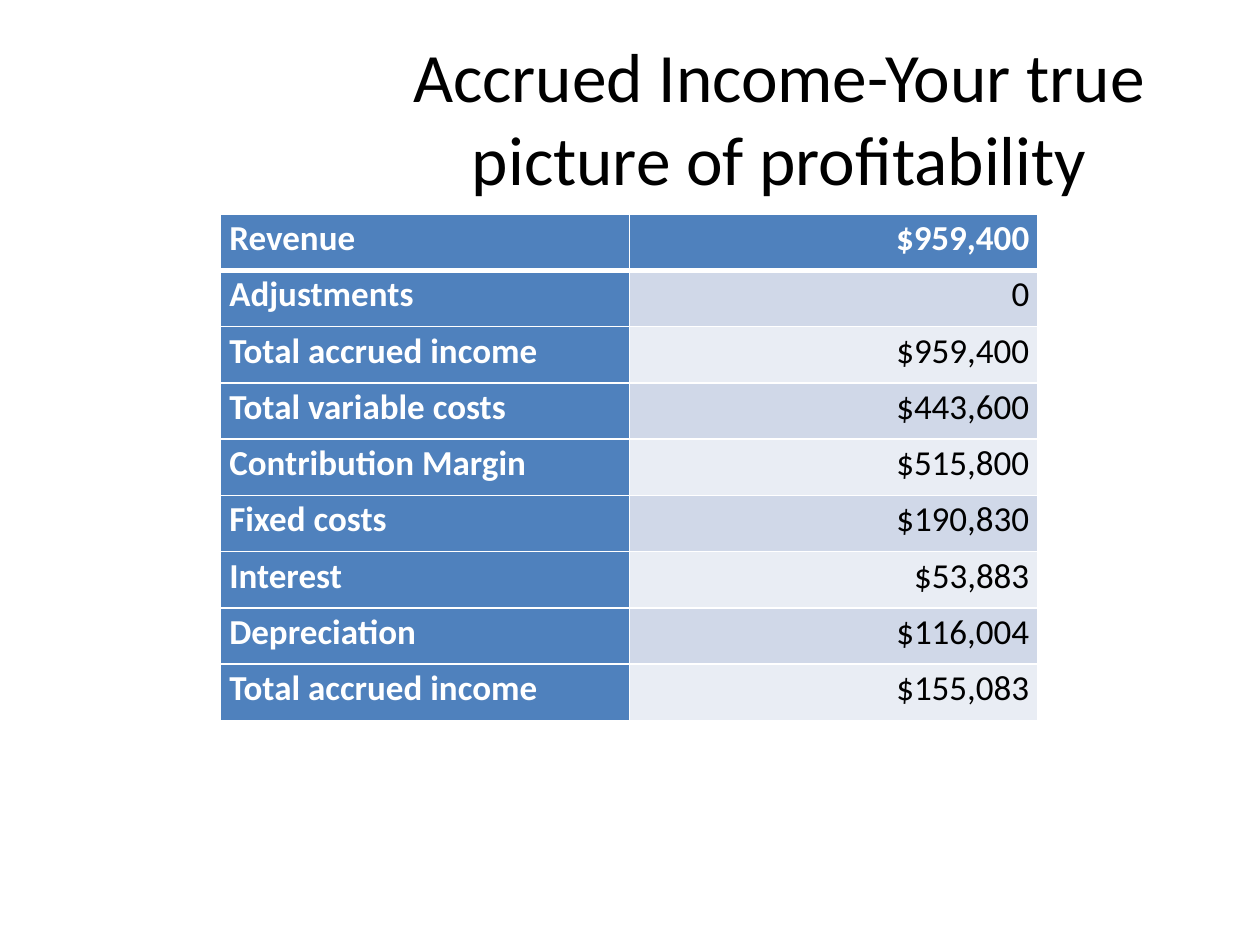
from pptx import Presentation
from pptx.dml.color import RGBColor
from pptx.enum import text
from pptx.oxml import parse_xml
from pptx.oxml.ns import nsdecls
from pptx.util import Inches, Pt

FONT = "Calibri"
WHITE = RGBColor(0xFF, 0xFF, 0xFF)
BLACK = RGBColor(0, 0, 0)
BLUE = RGBColor(0x4F, 0x81, 0xBD)
BANDS = RGBColor(0xE9, 0xED, 0xF4), RGBColor(0xD0, 0xD8, 0xE8)

ROWS = [
    ("Revenue", "$959,400"),
    ("Adjustments", "0"),
    ("Total accrued income", "$959,400"),
    ("Total variable costs", "$443,600"),
    ("Contribution Margin", "$515,800"),
    ("Fixed costs", "$190,830"),
    ("Interest", "$53,883"),
    ("Depreciation", "$116,004"),
    ("Total accrued income", "$155,083"),
]


def style(para, size, color, align, bold=False):
    para.alignment = align
    font = para.font
    font.name = FONT
    font.size = Pt(size)
    font.bold = bold
    font.color.rgb = color


def add_title(slide, words):
    box = slide.shapes.add_textbox(
        Inches(2.87), Inches(0.3), Inches(6.63), Inches(1.25))
    frame = box.text_frame
    frame.word_wrap = True
    frame.vertical_anchor = text.MSO_ANCHOR.MIDDLE
    frame.text = words
    style(frame.paragraphs[0], 39.6, BLACK, text.PP_ALIGN.CENTER)


def add_edge(cell, side, width):
    cell._tc.get_or_add_tcPr().append(parse_xml(
        f'<a:ln{side} {nsdecls("a")} w="{Pt(width)}"><a:solidFill>'
        f'<a:srgbClr val="{WHITE}"/></a:solidFill></a:ln{side}>'))


def fill_cell(cell, words, row, col):
    head = row == 0 or col == 0
    cell.margin_left = cell.margin_right = Inches(0.07)
    cell.margin_top = cell.margin_bottom = 0
    add_edge(cell, "L", 1)
    add_edge(cell, "R", 1)
    add_edge(cell, "T", 3 if row == 1 else 1)
    add_edge(cell, "B", 3 if row == 0 else 1)
    cell.fill.solid()
    cell.fill.fore_color.rgb = BLUE if head else BANDS[row % 2]
    cell.text = words
    para = cell.text_frame.paragraphs[0]
    para.line_spacing = 1.07
    align = text.PP_ALIGN.RIGHT if col else text.PP_ALIGN.LEFT
    style(para, 20, WHITE if head else BLACK, align, head)


def add_grid(slide, rows):
    high = Inches(4.02)
    table = slide.shapes.add_table(
        len(rows), 2, Inches(1.75), Inches(1.7), Inches(6.49), high).table
    table.first_col = True
    for r, pair in enumerate(rows):
        table.rows[r].height = high // len(rows)
        for c, words in enumerate(pair):
            fill_cell(table.cell(r, c), words, r, c)


def main():
    deck = Presentation()
    deck.slide_width = Inches(10)
    deck.slide_height = Inches(7.5)
    slide = deck.slides.add_slide(deck.slide_layouts[6])
    add_title(slide, "Accrued Income-Your true picture of profitability")
    add_grid(slide, ROWS)
    deck.save("out.pptx")


if __name__ == "__main__":
    main()
